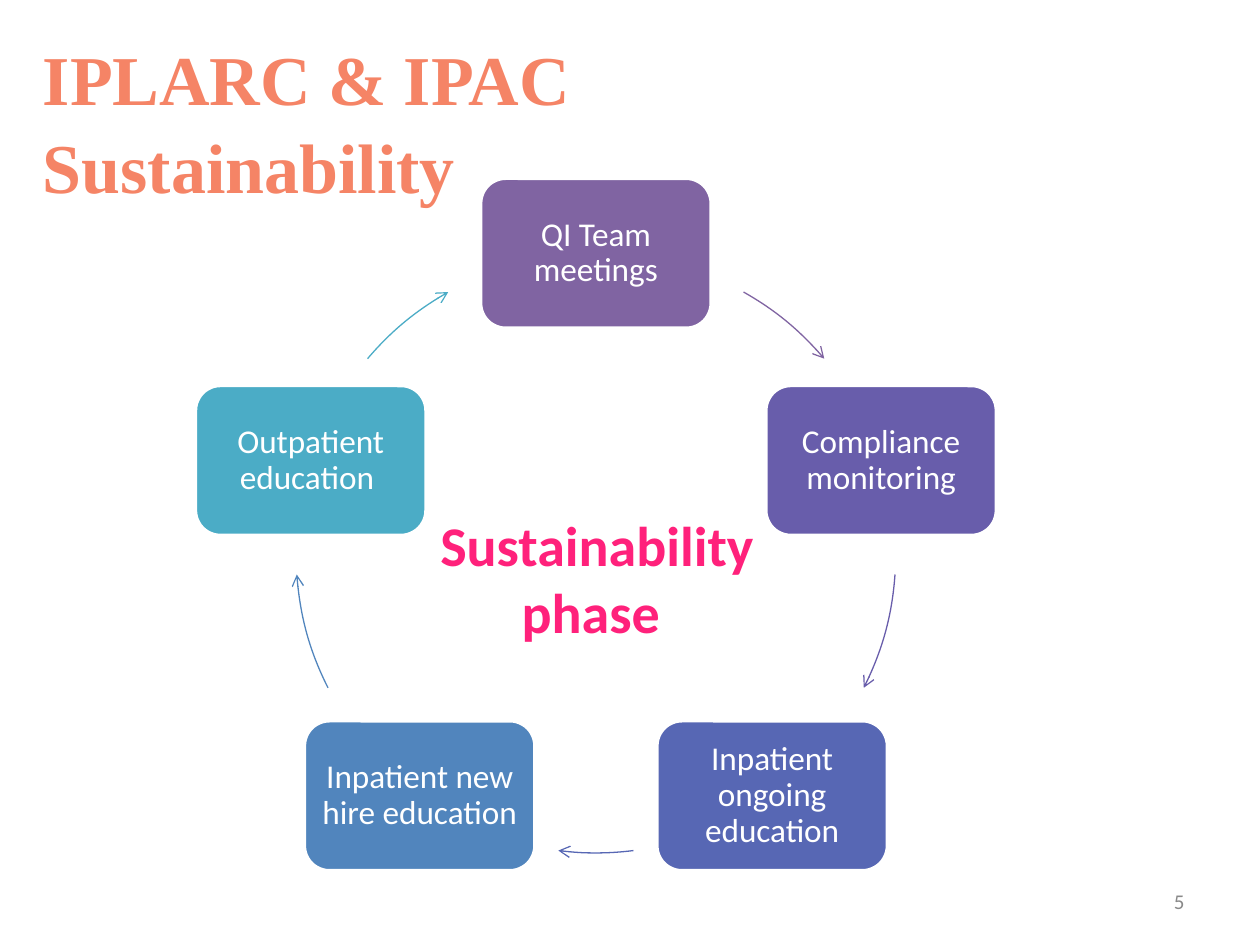
import math
from lxml import etree
from pptx import Presentation
from pptx.dml.color import RGBColor
from pptx.enum.shapes import MSO_SHAPE
from pptx.enum.text import MSO_ANCHOR, MSO_AUTO_SIZE, PP_ALIGN
from pptx.oxml.ns import qn
from pptx.util import Inches, Pt

LEFT, CENTER, RIGHT = PP_ALIGN.LEFT, PP_ALIGN.CENTER, PP_ALIGN.RIGHT
TOP, MIDDLE = MSO_ANCHOR.TOP, MSO_ANCHOR.MIDDLE
FIXED = MSO_AUTO_SIZE.NONE
ROUND, ARC = MSO_SHAPE.ROUNDED_RECTANGLE, MSO_SHAPE.ARC

# Label, colour, and where the next arrow starts and ends (degrees past the step)
STEPS = [
    ("QI Team meetings", "8064A2", 29.5, 49.6),
    ("Compliance monitoring", "685DAB", 22.1, 44.7),
    ("Inpatient ongoing education", "5767B4", 28.8, 43.2),
    ("Inpatient new hire education", "5185BD", 27.3, 49.9),
    ("Outpatient education ", "4BACC6", 22.4, 42.5),
]
STEP_W, STEP_H = 1.83, 1.19


def rgb(code):
    return RGBColor.from_string(code)


def write(shape, text, size, color, align, anchor=TOP, face="Calibri", bold=False):
    frame = shape.text_frame
    frame.word_wrap = True
    frame.auto_size = FIXED
    frame.vertical_anchor = anchor
    frame.text = text
    para = frame.paragraphs[0]
    para.alignment = align
    font = para.font
    font.name, font.size, font.bold = face, Pt(size), bold
    font.color.rgb = rgb(color)
    return frame


def add_title(slide, x, y, w, h):
    title = slide.shapes.title
    title.left, title.top, title.width, title.height = map(Inches, (x, y, w, h))
    frame = write(title, "IPLARC & IPAC Sustainability", 40, "F58466", LEFT,
                  face="Times New Roman", bold=True)
    frame.paragraphs[0].line_spacing = 1.05


def add_text(slide, x, y, w, h, *style, **more):
    box = slide.shapes.add_textbox(*map(Inches, (x, y, w, h)))
    write(box, *style, **more)


def add_step(slide, x, y, label, color):
    """Draw a rounded step centred on x, y."""
    box = slide.shapes.add_shape(
        ROUND, Inches(x - STEP_W / 2), Inches(y - STEP_H / 2),
        Inches(STEP_W), Inches(STEP_H))
    box.shadow.inherit = False
    box.fill.solid()
    box.fill.fore_color.rgb = rgb(color)
    box.line.color.rgb = rgb("FFFFFF")
    box.line.width = Pt(2)
    frame = write(box, label, 19, "FFFFFF", CENTER, MIDDLE)
    frame.margin_left = frame.margin_right = Inches(0.08)
    frame.margin_top = frame.margin_bottom = Inches(0.08)
    frame.paragraphs[0].line_spacing = 0.9


def add_arrow(slide, x, y, size, start, end, color):
    """Draw an arc of the circle in the given square, with an arrowhead."""
    arc = slide.shapes.add_shape(ARC, *map(Inches, (x, y, size, size)))
    for i, angle in enumerate((start, end)):
        arc.adjustments[i] = angle % 360 * 0.6  # 60000 units a degree
    arc.shadow.inherit = False
    arc.fill.background()
    arc.line.color.rgb = rgb(color)
    arc.line.width = Pt(0.75)
    etree.SubElement(arc.line._get_or_add_ln(), qn("a:tailEnd"), type="arrow")


def add_cycle(slide, x, y, size):
    """Place the steps evenly clockwise from the top of the circle."""
    r = size / 2
    for i, (label, color, start, end) in enumerate(STEPS):
        turn = i * 360 / len(STEPS) - 90
        rad = math.radians(turn)
        add_step(slide, x + r + r * math.cos(rad), y + r + r * math.sin(rad),
                 label, color)
        add_arrow(slide, x, y, size, turn + start, turn + end, color)


def main():
    prs = Presentation()
    prs.slide_width, prs.slide_height = Inches(10), Inches(7.5)
    slide = prs.slides.add_slide(prs.slide_layouts[5])
    add_text(slide, 7.17, 6.95, 2.33, 0.4, "5", 12, "898989", RIGHT, MIDDLE)
    add_title(slide, 0.24, 0.2, 6.85, 1.25)
    add_cycle(slide, 2.35, 2.01, 4.76)
    add_text(slide, 3.26, 4, 2.96, 1.18, "Sustainability phase ", 32, "FF217B",
             CENTER, bold=True)
    prs.save("out.pptx")


if __name__ == "__main__":
    main()
